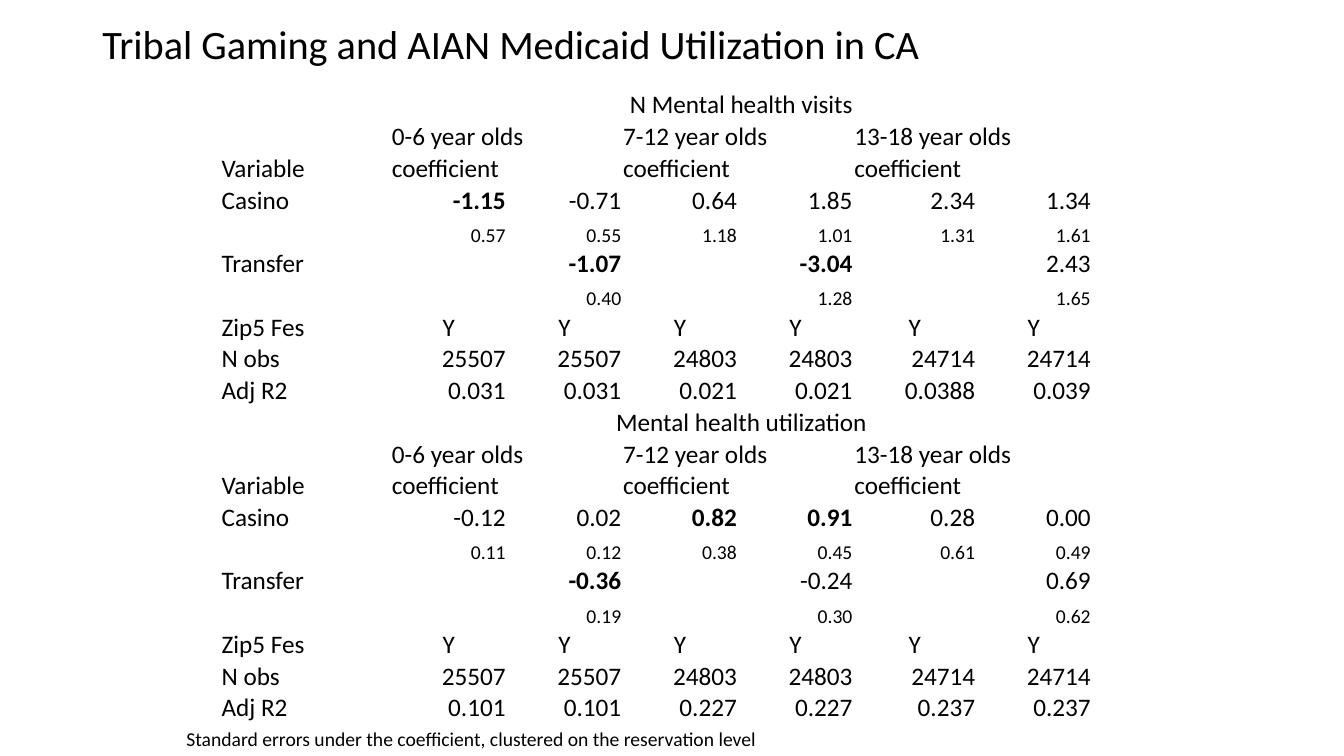
from lxml import etree
from pptx import Presentation
from pptx import util as u
from pptx.dml import color
from pptx.enum import text
from pptx.oxml import ns

BLACK = color.RGBColor(0x00, 0x00, 0x00)
WHITE = color.RGBColor(0xFF, 0xFF, 0xFF)
FONT = "Calibri"
LEFT, CENTER, RIGHT = text.PP_ALIGN.LEFT, text.PP_ALIGN.CENTER, text.PP_ALIGN.RIGHT
BODY, SMALL = 18, 14

COLUMN_WIDTHS = [121.7, 82.6, 82.6, 82.6, 82.6, 87.6, 82.6]
ROW_HEIGHT = 22.1
CELL_FORMAT = {
    "margin_left": u.Pt(0.7),
    "margin_right": u.Pt(0.7),
    "margin_top": u.Pt(0.7),
    "margin_bottom": 0,
    "vertical_anchor": text.MSO_ANCHOR.BOTTOM,
}
AGE_GROUPS = ["0-6 year olds", "7-12 year olds", "13-18 year olds"]
ROW_LABELS = ["Casino", "", "Transfer", "", "Zip5 Fes", "N obs", "Adj R2"]
ZIP_EFFECTS = ["Y"] * 6
OBSERVATIONS = ["25507", "25507", "24803", "24803", "24714", "24714"]
VISITS = [
    ["-1.15", "-0.71", "0.64", "1.85", "2.34", "1.34"],
    ["0.57", "0.55", "1.18", "1.01", "1.31", "1.61"],
    ["", "-1.07", "", "-3.04", "", "2.43"],
    ["", "0.40", "", "1.28", "", "1.65"],
    ZIP_EFFECTS,
    OBSERVATIONS,
    ["0.031", "0.031", "0.021", "0.021", "0.0388", "0.039"],
]
UTILIZATION = [
    ["-0.12", "0.02", "0.82", "0.91", "0.28", "0.00"],
    ["0.11", "0.12", "0.38", "0.45", "0.61", "0.49"],
    ["", "-0.36", "", "-0.24", "", "0.69"],
    ["", "0.19", "", "0.30", "", "0.62"],
    ZIP_EFFECTS,
    OBSERVATIONS,
    ["0.101", "0.101", "0.227", "0.227", "0.237", "0.237"],
]
PANELS = [
    {"heading": "N Mental health visits", "values": VISITS, "merged": [1, 3],
     "significant": {"-1.15", "-1.07", "-3.04"}},
    {"heading": "Mental health utilization", "values": UTILIZATION, "merged": [],
     "significant": {"0.82", "0.91", "-0.36"}},
]


def apply_format(target, values):
    for name, value in values.items():
        setattr(target, name, value)


def write(paragraph, words, size, align=LEFT, bold=False):
    paragraph.alignment = align
    run = paragraph.add_run()
    run.text = words
    apply_format(run.font, {"name": FONT, "size": u.Pt(size), "bold": bold})
    run.font.color.rgb = BLACK


def add_text(slide, box, words, size, anchor, spacing):
    shape = slide.shapes.add_textbox(*map(u.Pt, box))
    apply_format(shape.text_frame, {"word_wrap": True, "vertical_anchor": anchor})
    paragraph = shape.text_frame.paragraphs[0]
    paragraph.line_spacing = spacing
    write(paragraph, words, size)


def style_cell(cell):
    apply_format(cell, CELL_FORMAT)
    properties = cell._tc.get_or_add_tcPr()
    for side in ("a:lnL", "a:lnR", "a:lnT", "a:lnB"):
        line = etree.SubElement(properties, ns.qn(side), w=str(u.Pt(1)))
        fill = etree.SubElement(line, ns.qn("a:solidFill"))
        etree.SubElement(fill, ns.qn("a:srgbClr"), val=str(WHITE))
    cell.fill.background()


def write_cell(table, row, column, words, size=BODY, align=LEFT, bold=False):
    if words:
        paragraph = table.cell(row, column).text_frame.paragraphs[0]
        write(paragraph, words, size, align, bold)


def merge_across(table, row, first, last):
    table.cell(row, first).merge(table.cell(row, last))


def fill_panel(table, top, panel):
    merge_across(table, top, 1, 6)
    write_cell(table, top, 1, panel["heading"], align=CENTER)
    write_cell(table, top + 2, 0, "Variable")
    for group, ages in enumerate(AGE_GROUPS):
        column = 1 + 2 * group
        merge_across(table, top + 1, column, column + 1)
        write_cell(table, top + 1, column, ages)
        write_cell(table, top + 2, column, "coefficient")
    for column in panel["merged"]:
        merge_across(table, top + 2, column, column + 1)
    for row, (label, values) in enumerate(zip(ROW_LABELS, panel["values"]), top + 3):
        write_cell(table, row, 0, label)
        size = BODY if label else SMALL
        align = CENTER if values is ZIP_EFFECTS else RIGHT
        for column, value in enumerate(values, 1):
            write_cell(table, row, column, value, size, align,
                       value in panel["significant"])


def add_results(slide):
    panel_rows = 3 + len(ROW_LABELS)
    row_count = panel_rows * len(PANELS)
    frame = slide.shapes.add_table(
        row_count, len(COLUMN_WIDTHS), u.Pt(157.6), u.Pt(63.4),
        u.Pt(sum(COLUMN_WIDTHS)), u.Pt(ROW_HEIGHT * row_count))
    table = frame.table
    apply_format(table, {"first_row": False, "horz_banding": False})
    for column, width in zip(table.columns, COLUMN_WIDTHS):
        column.width = u.Pt(width)
    for row in table.rows:
        row.height = u.Pt(ROW_HEIGHT)
    for cell in table.iter_cells():
        style_cell(cell)
    for index, panel in enumerate(PANELS):
        fill_panel(table, index * panel_rows, panel)


def main():
    presentation = Presentation()
    apply_format(presentation, {"slide_width": u.Pt(960), "slide_height": u.Pt(540)})
    slide = presentation.slides.add_slide(presentation.slide_layouts[6])
    add_results(slide)
    add_text(slide, (66, 13, 828, 40.3),
             "Tribal Gaming and AIAN Medicaid Utilization in CA",
             28.8, text.MSO_ANCHOR.MIDDLE, 0.9)
    add_text(slide, (126, 515.5, 688, 24.2),
             "Standard errors under the coefficient, clustered on the reservation level",
             SMALL, text.MSO_ANCHOR.TOP, 1.0)
    presentation.save("out.pptx")


if __name__ == "__main__":
    main()
